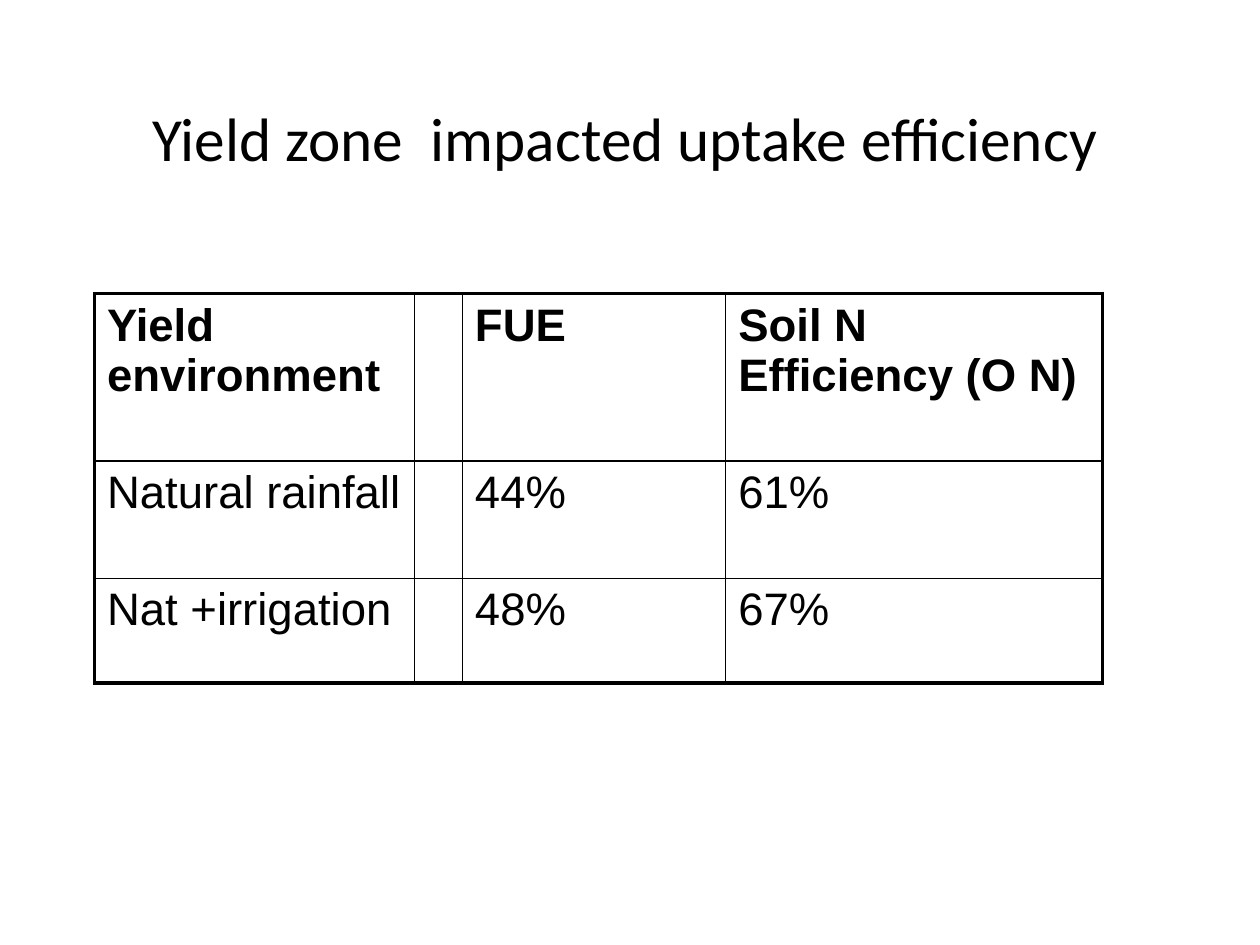
from lxml import etree
from pptx import Presentation
from pptx.dml.color import RGBColor
from pptx.enum.text import MSO_ANCHOR, PP_ALIGN
from pptx.oxml.ns import qn
from pptx.util import Inches, Pt

MIDDLE = MSO_ANCHOR.MIDDLE
CENTER = PP_ALIGN.CENTER
BLACK = "000000"
THIN, THICK = 1, 2.25


def add_run(p, text, font, size, color, bold=False):
    r = p.add_run()
    r.text = text
    r.font.name = font
    r.font.size = Pt(size)
    r.font.bold = bold
    r.font.color.rgb = RGBColor.from_string(color)


def set_borders(cell, widths, color):
    tcPr = cell._tc.get_or_add_tcPr()
    for i, (side, width) in enumerate(zip("LRTB", widths)):
        ln = etree.Element(qn(f"a:ln{side}"), w=str(Pt(width)))
        fill = etree.SubElement(ln, qn("a:solidFill"))
        etree.SubElement(fill, qn("a:srgbClr"), val=color)
        tcPr.insert(i, ln)


prs = Presentation()
prs.slide_width = Inches(10)
prs.slide_height = Inches(7.5)
s = prs.slides.add_slide(prs.slide_layouts[6])

title = s.shapes.add_textbox(Inches(0.42), Inches(0.42), Inches(9.08), Inches(1.33))
tf = title.text_frame
tf.word_wrap = True
tf.vertical_anchor = MIDDLE
p = tf.paragraphs[0]
p.alignment = CENTER
add_run(p, "Yield zone  impacted uptake efficiency", "Calibri", 35, BLACK)

rows = [
    ["Yield environment", "", "FUE", "Soil N Efficiency (O N)"],
    ["Natural rainfall", "", "44%", "61%"],
    ["Nat +irrigation", "", "48%", "67%"],
]
col_widths = [2.54, 0.38, 2.09, 2.99]
row_heights = [1.33, 0.93, 0.83]
last_row, last_col = len(rows) - 1, len(col_widths) - 1

table = s.shapes.add_table(
    len(rows), len(col_widths), Inches(0.75), Inches(2.33),
    Inches(sum(col_widths)), Inches(sum(row_heights)),
).table
table.first_row = False
table.horz_banding = False
for column, width in zip(table.columns, col_widths):
    column.width = Inches(width)

for i, (values, height) in enumerate(zip(rows, row_heights)):
    table.rows[i].height = Inches(height)
    for j, text in enumerate(values):
        cell = table.cell(i, j)
        cell.fill.background()
        edges = [j == 0, j == last_col, i == 0, i == last_row]
        set_borders(cell, [THICK if edge else THIN for edge in edges], BLACK)
        if text:
            p = cell.text_frame.paragraphs[0]
            spacing = etree.SubElement(p._p.get_or_add_pPr(), qn("a:spcBef"))
            etree.SubElement(spacing, qn("a:spcPct"), val="20000")
            add_run(p, text, "Arial", 26, BLACK, bold=i == 0)

prs.save("out.pptx")
